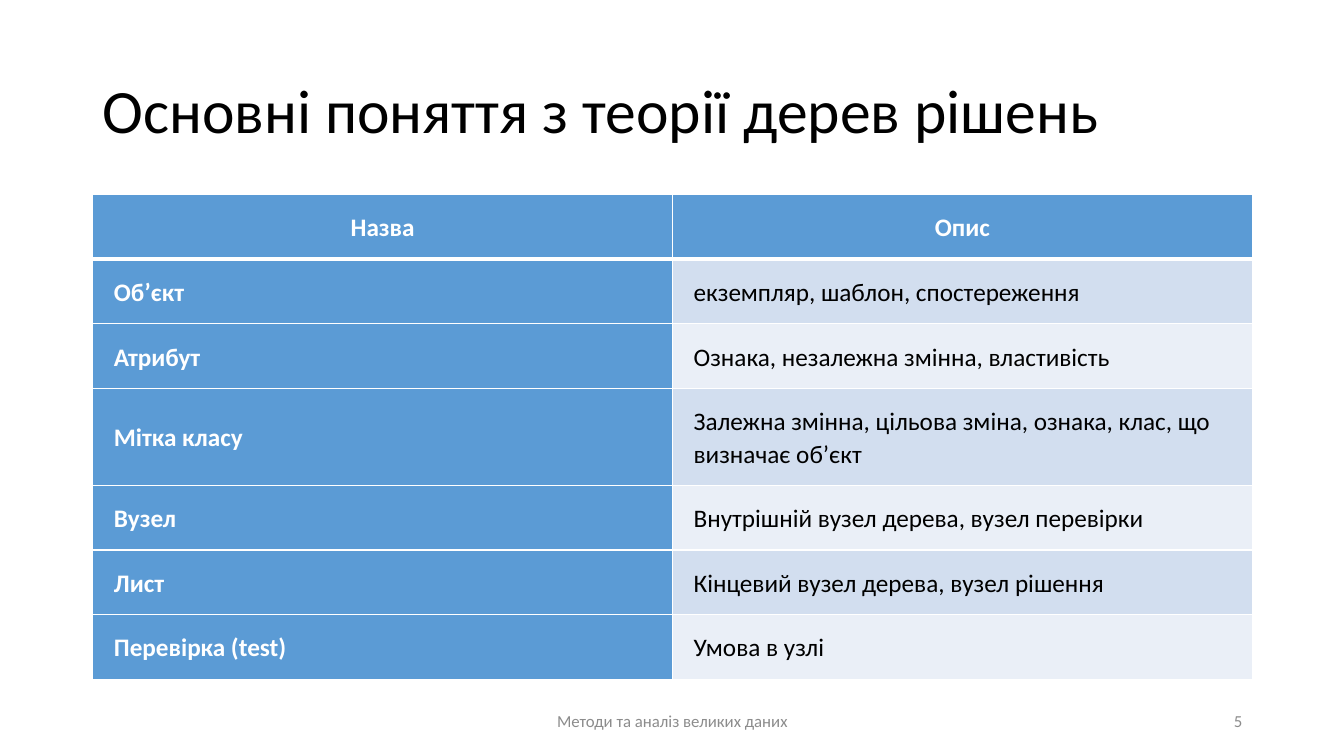
from pptx import Presentation
from pptx.dml.color import RGBColor
from pptx.enum import text
from pptx.oxml import parse_xml
from pptx.oxml import ns
from pptx.util import Inches, Pt

TERMS = [
    ("Назва", "Опис"),
    ("Об’єкт", "екземпляр, шаблон, спостереження"),
    ("Атрибут", "Ознака, незалежна змінна, властивість"),
    ("Мітка класу", "Залежна змінна, цільова зміна, ознака, клас, що визначає об’єкт"),
    ("Вузел", "Внутрішній вузел дерева, вузел перевірки"),
    ("Лист", "Кінцевий вузел дерева, вузел рішення"),
    ("Перевірка (test)", "Умова в узлі"),
]
TALL_ROW = 3
LEFT, CENTER, RIGHT = text.PP_ALIGN.LEFT, text.PP_ALIGN.CENTER, text.PP_ALIGN.RIGHT


def color(value):
    return RGBColor.from_string(value)


class SlideBuilder:
    font = "Calibri"
    black, white, gray = "000000", "FFFFFF", "8C8C8C"
    accent = "5B9BD5"
    bands = ("EAEFF7", "D2DEEF")

    def __init__(self, slide):
        self.slide = slide

    def style(self, paragraph, size, ink, align=LEFT, bold=False, spacing=1.0):
        paragraph.alignment = align
        paragraph.line_spacing = spacing
        paragraph.font.name = self.font
        paragraph.font.size = Pt(size)
        paragraph.font.bold = bold
        paragraph.font.color.rgb = color(ink)

    def textbox(self, box, content, size, ink, align=LEFT, spacing=1.0):
        shape = self.slide.shapes.add_textbox(*map(Inches, box))
        frame = shape.text_frame
        frame.word_wrap = True
        frame.vertical_anchor = text.MSO_ANCHOR.MIDDLE
        frame.text = content
        self.style(frame.paragraphs[0], size, ink, align, spacing=spacing)

    def borders(self, cell, widths):
        properties = cell._tc.get_or_add_tcPr()
        for side, width in widths.items():
            properties.append(parse_xml(
                f'<a:ln{side} {ns.nsdecls("a")} w="{Pt(width)}"><a:solidFill>'
                f'<a:srgbClr val="{self.white}"/></a:solidFill></a:ln{side}>'))

    def cell(self, cell, content, row, column):
        header = row == 0
        strong = header or column == 0
        self.borders(cell, {"L": 1, "R": 1, "T": 3 if row == 1 else 1, "B": 3 if header else 1})
        cell.fill.solid()
        cell.fill.fore_color.rgb = color(self.accent if strong else self.bands[row % 2])
        cell.margin_left = cell.margin_right = Inches(0.21)
        cell.margin_top = cell.margin_bottom = Inches(0.16)
        cell.vertical_anchor = text.MSO_ANCHOR.MIDDLE
        cell.text = content
        self.style(cell.text_frame.paragraphs[0], 18, self.white if strong else self.black,
                   CENTER if header else LEFT, strong, 1.07)

    def table(self, box, rows, tall_row):
        frame = self.slide.shapes.add_table(len(rows), len(rows[0]), *map(Inches, box))
        table = frame.table
        for row, contents in enumerate(rows):
            table.rows[row].height = Inches(0.96 if row == tall_row else 0.64)
            for column, content in enumerate(contents):
                self.cell(table.cell(row, column), content, row, column)


def main():
    presentation = Presentation()
    presentation.slide_width = Inches(13.33)
    presentation.slide_height = Inches(7.5)
    builder = SlideBuilder(presentation.slides.add_slide(presentation.slide_layouts[6]))
    builder.textbox((0.92, 0.4, 11.5, 1.45), "Основні поняття з теорії дерев рішень",
                    44, builder.black, spacing=0.9)
    builder.table((0.92, 1.93, 11.5, 4.8), TERMS, TALL_ROW)
    builder.textbox((4.42, 6.95, 4.5, 0.4), "Методи та аналіз великих даних",
                    12, builder.gray, CENTER)
    builder.textbox((9.42, 6.95, 3, 0.4), "5", 12, builder.gray, RIGHT)
    presentation.save("out.pptx")


if __name__ == "__main__":
    main()
